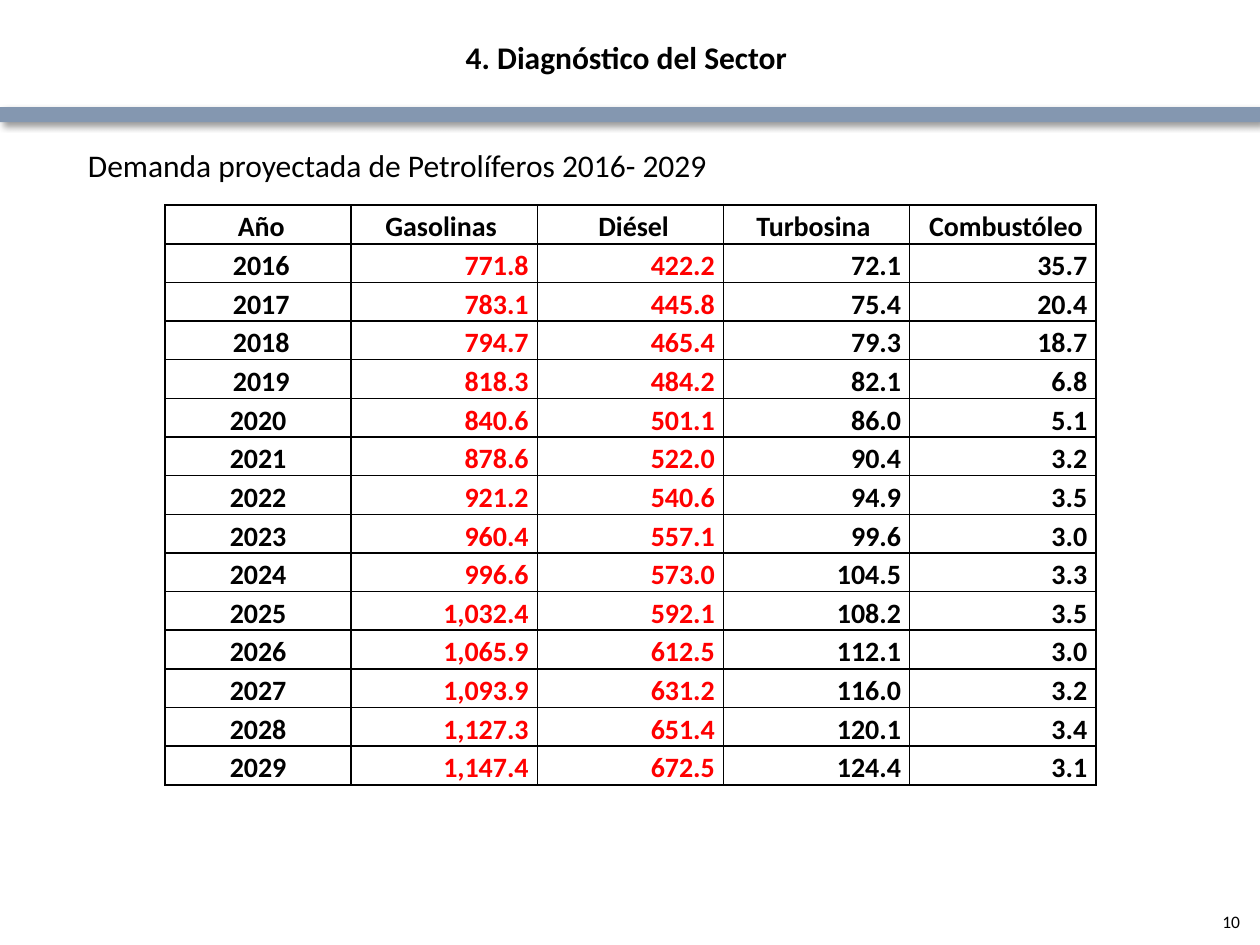
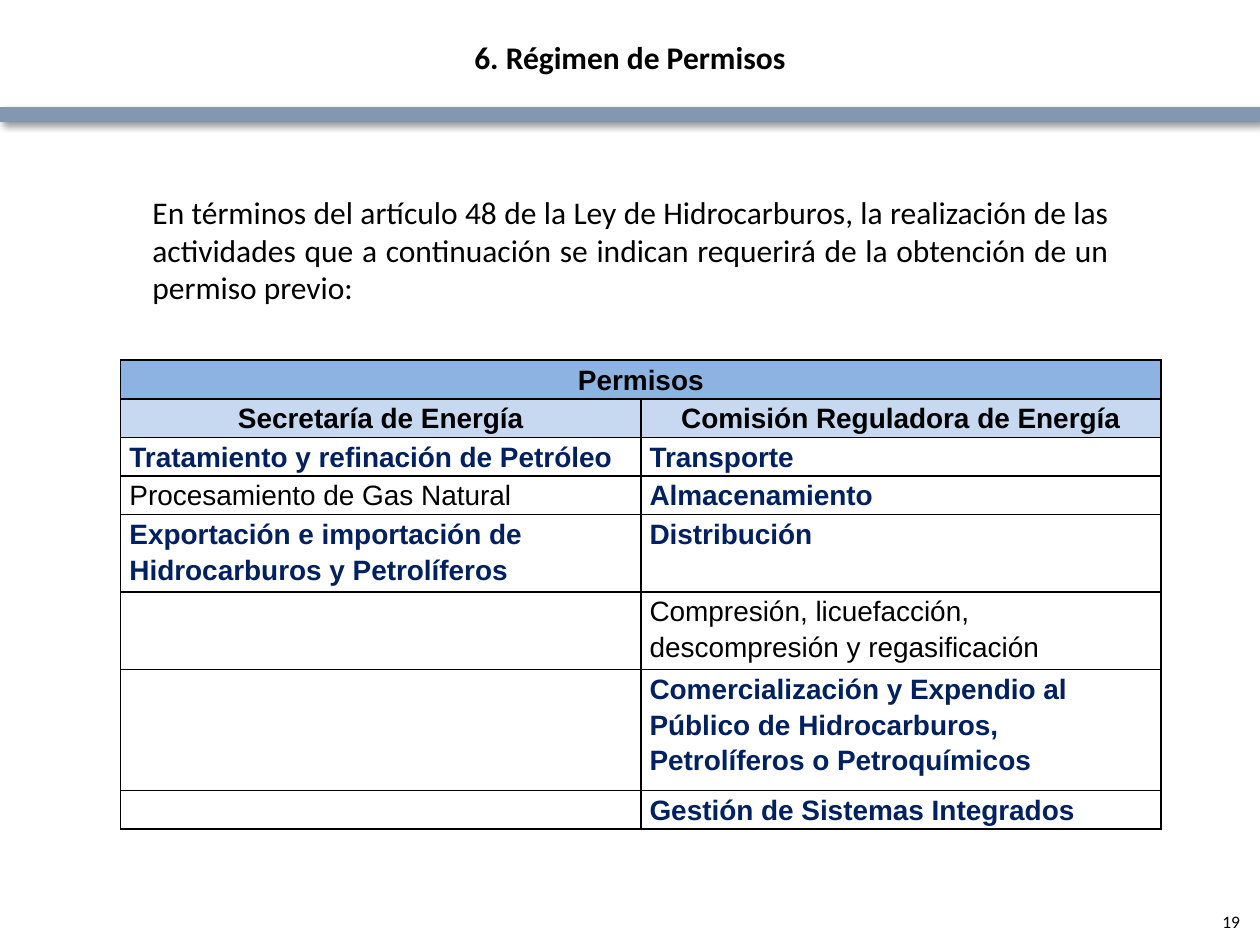
from lxml.etree import SubElement
from pptx import Presentation
from pptx.dml.color import RGBColor
from pptx.enum.shapes import MSO_SHAPE
from pptx.enum.text import MSO_ANCHOR, MSO_AUTO_SIZE, PP_ALIGN
from pptx.oxml.ns import qn
from pptx.util import Pt

BLACK, RED, NAVY, BAND = "000000", "FF0000", "002060", "8497B0"
HEADER_BLUE, SUBHEADER_BLUE = "8DB3E2", "C6D9F1"
ROW_HEIGHT = 22.1


def color(hex_string):
    return RGBColor.from_string(hex_string)


def apply_format(target, values):
    for name, value in values.items():
        setattr(target, name, value)


class Deck:
    """Shared style and the slide being built."""

    BODY = {"name": "Calibri", "size": Pt(18), "bold": False}
    TITLE = {**BODY, "bold": True}
    NUMBER = {**BODY, "size": Pt(10)}
    FRAME = {"word_wrap": True, "auto_size": MSO_AUTO_SIZE.SHAPE_TO_FIT_TEXT,
             "vertical_anchor": MSO_ANCHOR.TOP}
    CELL = {"margin_left": Pt(5), "margin_right": Pt(5),
            "margin_top": 0, "margin_bottom": 0}

    def __init__(self):
        self.presentation = Presentation()
        apply_format(self.presentation,
                     {"slide_width": Pt(720), "slide_height": Pt(540)})
        self.slide = None

    def new_slide(self, title, number, title_height=29):
        layout = self.presentation.slide_layouts[5]
        self.slide = self.presentation.slides.add_slide(layout)
        self.band()
        heading = self.slide.shapes.title
        apply_format(heading, {"left": Pt(80), "top": Pt(18),
                               "width": Pt(560), "height": Pt(title_height)})
        self.fill_frame(heading.text_frame, title, self.TITLE, PP_ALIGN.CENTER)
        self.text(number, (553.7, 512, 162, 28.8), self.NUMBER, PP_ALIGN.RIGHT,
                  auto_size=MSO_AUTO_SIZE.NONE, vertical_anchor=MSO_ANCHOR.MIDDLE)

    def band(self):
        band = self.slide.shapes.add_shape(
            MSO_SHAPE.RECTANGLE, 0, Pt(61.2), Pt(720), Pt(8.64))
        band.fill.solid()
        band.fill.fore_color.rgb = color(BAND)
        band.line.fill.background()
        band.shadow.inherit = False
        effects = band.element.spPr.find(qn("a:effectLst"))
        shadow = SubElement(effects, qn("a:outerShdw"), blurRad=str(Pt(4)),
                            dist=str(Pt(3)), dir="2700000", algn="tl")
        tint = SubElement(shadow, qn("a:srgbClr"), val=BLACK)
        SubElement(tint, qn("a:alpha"), val="40000")

    def text(self, words, box, font, align, **frame_values):
        frame = self.slide.shapes.add_textbox(*map(Pt, box)).text_frame
        self.fill_frame(frame, words, font, align, **frame_values)

    def fill_frame(self, frame, words, font, align, **frame_values):
        apply_format(frame, {**self.FRAME, **frame_values})
        self.fill_paragraph(frame.paragraphs[0], words, font, align)

    def fill_paragraph(self, paragraph, words, font, align, ink=BLACK):
        paragraph.alignment = align
        if words:
            run = paragraph.add_run()
            run.text = words
            apply_format(run.font, font)
            run.font.color.rgb = color(ink)
        else:
            SubElement(paragraph._p, qn("a:endParaRPr"),
                       sz=str(int(font["size"].pt * 100)))

    def table(self, left, top, widths, heights):
        table = self.slide.shapes.add_table(
            len(heights), len(widths), Pt(left), Pt(top),
            Pt(sum(widths)), Pt(sum(heights))).table
        apply_format(table, {"first_row": False, "horz_banding": False})
        for column, width in zip(table.columns, widths):
            column.width = Pt(width)
        for row, height in zip(table.rows, heights):
            row.height = Pt(height)
        return table

    def cell(self, cell, words, font, align, ink=BLACK, fill=None):
        apply_format(cell, self.CELL)
        properties = cell._tc.get_or_add_tcPr()
        for side in ("lnL", "lnR", "lnT", "lnB"):
            border = SubElement(properties, qn(f"a:{side}"), w=str(Pt(1)))
            solid = SubElement(border, qn("a:solidFill"))
            SubElement(solid, qn("a:srgbClr"), val=BLACK)
        if fill:
            cell.fill.solid()
            cell.fill.fore_color.rgb = color(fill)
        else:
            cell.fill.background()
        paragraph = cell.text_frame.paragraphs[0]
        paragraph.line_spacing = 1.15
        self.fill_paragraph(paragraph, words, font, align, ink)


# Headings and the first years carry a no-break space
DEMAND = [
    (" Año", "Gasolinas ", " Diésel", "Turbosina ", " Combustóleo"),
    (" 2016", "771.8", "422.2", "72.1", "35.7"),
    (" 2017", "783.1", "445.8", "75.4", "20.4"),
    (" 2018", "794.7", "465.4", "79.3", "18.7"),
    (" 2019", "818.3", "484.2", "82.1", "6.8"),
    ("2020", "840.6", "501.1", "86.0", "5.1"),
    ("2021", "878.6", "522.0", "90.4", "3.2"),
    ("2022", "921.2", "540.6", "94.9", "3.5"),
    ("2023", "960.4", "557.1", "99.6", "3.0"),
    ("2024", "996.6", "573.0", "104.5", "3.3"),
    ("2025", "1,032.4", "592.1", "108.2", "3.5"),
    ("2026", "1,065.9", "612.5", "112.1", "3.0"),
    ("2027", "1,093.9", "631.2", "116.0", "3.2"),
    ("2028", "1,127.3", "651.4", "120.1", "3.4"),
    ("2029", "1,147.4", "672.5", "124.4", "3.1"),
]

PERMITS = [
    ("Permisos", ""),
    ("Secretaría de Energía", "Comisión Reguladora de Energía"),
    ("Tratamiento y refinación de Petróleo", "Transporte"),
    ("Procesamiento de Gas Natural", "Almacenamiento"),
    ("Exportación e importación de Hidrocarburos y Petrolíferos", "Distribución"),
    ("", "Compresión, licuefacción, descompresión y regasificación"),
    ("", "Comercialización y Expendio al Público de Hidrocarburos, "
         "Petrolíferos o Petroquímicos"),
    ("", "Gestión de Sistemas Integrados"),
]
GAS_PERMITS = {PERMITS[3][0], PERMITS[5][1]}


def demand_slide(deck):
    deck.new_slide("4. Diagnóstico del Sector ", "10", title_height=51)
    deck.text("Demanda proyectada de Petrolíferos 2016- 2029",
              (43.2, 80, 633.6, 29), deck.BODY, PP_ALIGN.JUSTIFY)
    font = {**deck.TITLE, "size": Pt(16)}
    table = deck.table(94.3, 117.2, [106.4] * 5, [ROW_HEIGHT] * len(DEMAND))
    for r, values in enumerate(DEMAND):
        for c, value in enumerate(values):
            is_figure = r > 0 and c > 0
            deck.cell(table.cell(r, c), value, font,
                      PP_ALIGN.RIGHT if is_figure else PP_ALIGN.CENTER,
                      RED if is_figure and c < 3 else BLACK)


def permits_slide(deck):
    deck.new_slide("6. Régimen de Permisos", "19")
    deck.text("En términos del artículo 48 de la Ley de Hidrocarburos, la "
              "realización de las actividades que a continuación se indican "
              "requerirá de la obtención de un permiso previo:",
              (80, 106.6, 560.9, 72.7), deck.BODY, PP_ALIGN.JUSTIFY)
    heights = [ROW_HEIGHT] * 4 + [2 * ROW_HEIGHT] * 2 + [69.1, ROW_HEIGHT]
    table = deck.table(69, 205.8, [297.2] * 2, heights)
    header_fills = (HEADER_BLUE, SUBHEADER_BLUE)
    for r, permits in enumerate(PERMITS):
        is_header = r < len(header_fills)
        for c, permit in enumerate(permits):
            plain = permit in GAS_PERMITS
            font = {"name": "Arial", "size": Pt(16), "bold": not plain}
            deck.cell(table.cell(r, c), permit, font,
                      PP_ALIGN.CENTER if is_header else PP_ALIGN.LEFT,
                      BLACK if is_header or plain else NAVY,
                      header_fills[r] if is_header else None)
    table.cell(0, 0).merge(table.cell(0, 1))


def main():
    deck = Deck()
    demand_slide(deck)
    permits_slide(deck)
    deck.presentation.save("out.pptx")


if __name__ == "__main__":
    main()
